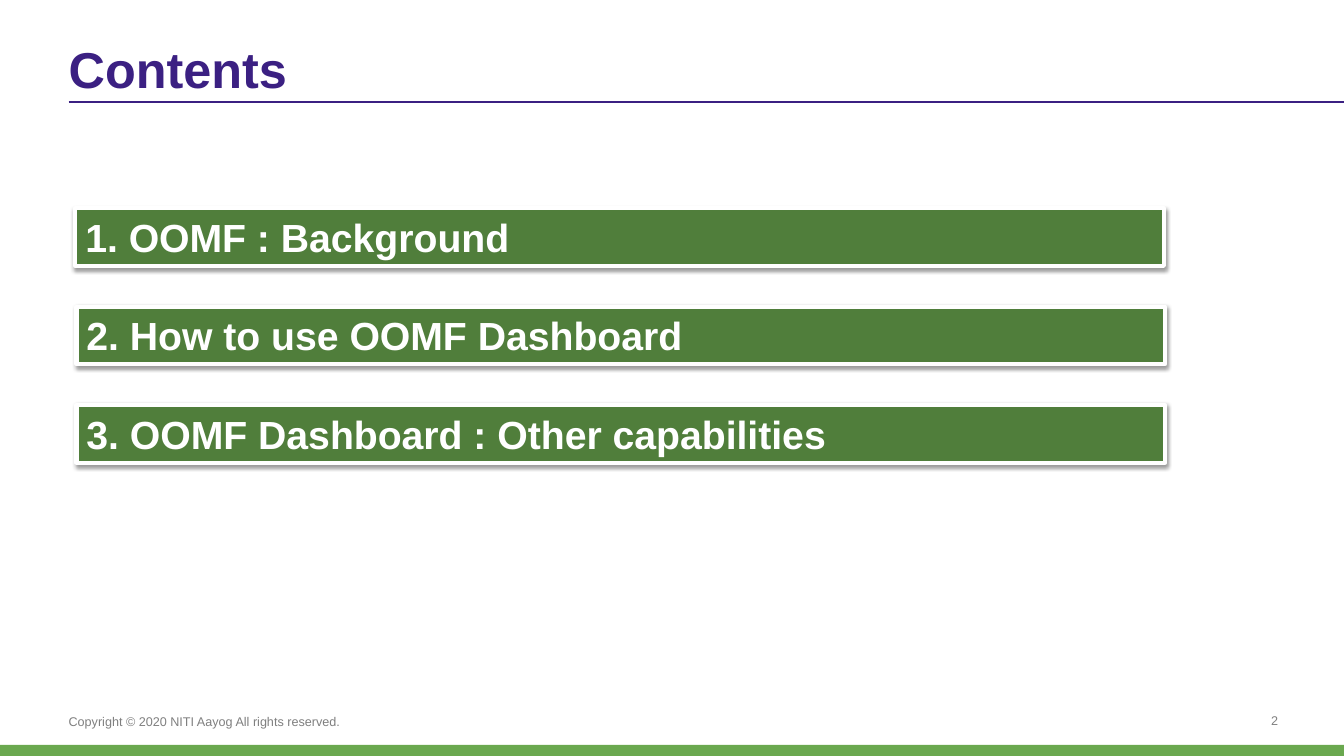
"""Build the contents slide with three agenda bars."""
from lxml.etree import SubElement
from pptx import Presentation
from pptx.dml.color import RGBColor
from pptx.enum.shapes import MSO_CONNECTOR, MSO_SHAPE
from pptx.enum.text import MSO_ANCHOR, MSO_AUTO_SIZE, PP_ALIGN
from pptx.oxml.ns import qn
from pptx.util import Cm, Pt


def tint(hue):
    return RGBColor.from_string(hue)


def write(shape, text, size, hue, bold=False, align=PP_ALIGN.LEFT, flush=True):
    frame = shape.text_frame
    frame.word_wrap = True
    frame.auto_size = MSO_AUTO_SIZE.NONE
    frame.vertical_anchor = MSO_ANCHOR.BOTTOM if flush else MSO_ANCHOR.TOP
    if flush:
        frame.margin_left = frame.margin_right = 0
        frame.margin_top = frame.margin_bottom = 0
    para = frame.paragraphs[0]
    para.alignment = align
    run = para.add_run()
    run.text = text
    run.font.name = "Arial"
    run.font.size = Pt(size)
    run.font.bold = bold
    run.font.color.rgb = tint(hue)


deck = Presentation()
deck.slide_width, deck.slide_height = Cm(33.87), Cm(19.05)
slide = deck.slides.add_slide(deck.slide_layouts[5])
shapes = slide.shapes

title = shapes.title
title.left, title.top, title.width, title.height = Cm(1.73), Cm(0.3), Cm(30.45), Cm(2.18)
write(title, "Contents", 36, "3B2082", bold=True)

rule = shapes.add_connector(MSO_CONNECTOR.STRAIGHT, Cm(1.73), Cm(2.57), Cm(33.87), Cm(2.57))
rule.line.color.rgb = tint("3B2082")
rule.line.width = Pt(1)
SubElement(rule.line._get_or_add_ln().getparent(), qn("a:effectLst"))

number = shapes.add_textbox(Cm(29.31), Cm(17.86), Cm(2.9), Cm(0.48))
write(number, "2", 9, "808080", align=PP_ALIGN.RIGHT)
notice = shapes.add_textbox(Cm(1.73), Cm(17.96), Cm(10.72), Cm(0.41))
write(notice, "Copyright © 2020 NITI Aayog All rights reserved.", 9, "7F7F7F")

strip = shapes.add_shape(MSO_SHAPE.RECTANGLE, 0, Cm(18.77), Cm(33.87), Cm(0.28))
strip.shadow.inherit = False
strip.fill.solid()
strip.fill.fore_color.rgb = tint("6AA84F")
strip.line.fill.background()

topics = [
    (1.9, "1. OOMF : Background"),
    (1.93, "2. How to use OOMF Dashboard"),
    (1.93, "3. OOMF Dashboard : Other capabilities"),
]
for row, (left, topic) in enumerate(topics):
    bar = shapes.add_shape(
        MSO_SHAPE.RECTANGLE, Cm(left), Cm(5.25 + 2.48 * row), Cm(27.43), Cm(1.45))
    bar.fill.solid()
    bar.fill.fore_color.rgb = tint("507E3B")
    bar.line.color.rgb = tint("FFFFFF")
    bar.line.width = Pt(3)
    bar.shadow.inherit = False
    glow = SubElement(
        bar.element.spPr.find(qn("a:effectLst")), qn("a:outerShdw"),
        blurRad=str(Pt(3.1)), dist=str(Pt(1.6)), dir="5400000", rotWithShape="0")
    shade = SubElement(glow, qn("a:srgbClr"), val="000000")
    SubElement(shade, qn("a:alpha"), val="38000")
    write(bar, topic, 28, "FFFFFF", bold=True, flush=False)

deck.save("out.pptx")
